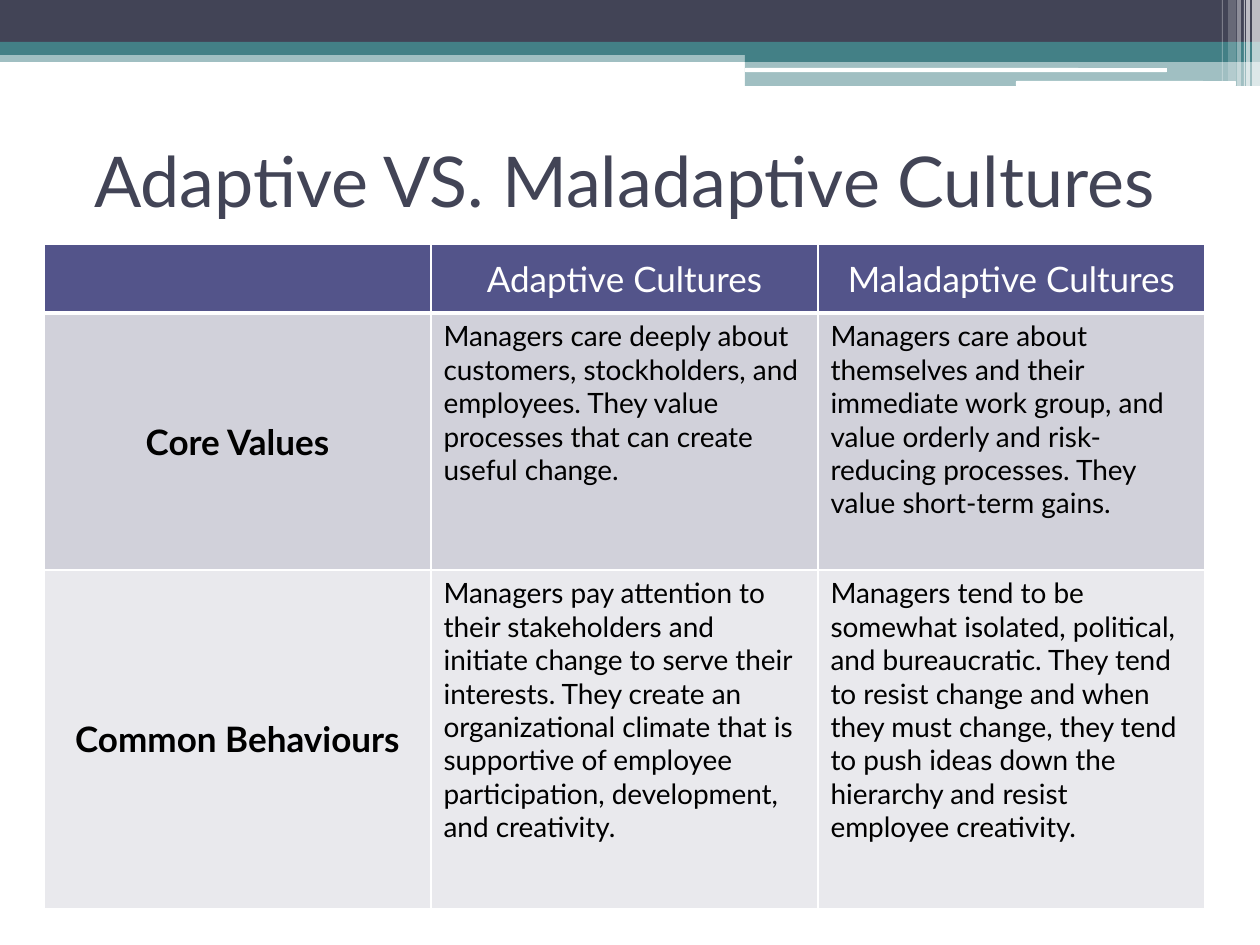
import lxml.etree
import pptx
import pptx.dml.color
import pptx.enum.shapes
import pptx.enum.text
import pptx.oxml.ns
import pptx.util

EMU_PER_PX = 914400 / 126
SHAPE = pptx.enum.shapes.MSO_SHAPE
ALIGN = pptx.enum.text.PP_ALIGN
ANCHOR = pptx.enum.text.MSO_ANCHOR
WHITE, BLACK, NAVY, TEAL = "FFFFFF", "000000", "424456", "438086"
HEADER, DARK_ROW, LIGHT_ROW = "53548A", "D1D1DA", "E9E9ED"


def px(n):
    return pptx.util.Emu(round(n * EMU_PER_PX))


def color(hex_code):
    return pptx.dml.color.RGBColor.from_string(hex_code)


def child(parent, tag, **attrs):
    return lxml.etree.SubElement(parent, pptx.oxml.ns.qn(tag), **attrs)


class Deck:
    """Holds the font and the slide being drawn."""
    font = "Lato"

    def __init__(self, width, height):
        self.prs = pptx.Presentation()
        self.prs.slide_width, self.prs.slide_height = px(width), px(height)
        self.s = self.prs.slides.add_slide(self.prs.slide_layouts[6])

    def bar(self, x, y, w, h, fill, opacity=100, rounded=False):
        kind = SHAPE.ROUNDED_RECTANGLE if rounded else SHAPE.RECTANGLE
        sp = self.s.shapes.add_shape(kind, px(x), px(y), px(w), px(h))
        sp.shadow.inherit = False
        sp.line.fill.background()
        sp.fill.solid()
        sp.fill.fore_color.rgb = color(fill)
        if opacity < 100:
            clr = sp.element.spPr.find(".//" + pptx.oxml.ns.qn("a:srgbClr"))
            child(clr, "a:alpha", val=str(opacity * 1000))

    def add_text(self, tf, text, size, fill, bold=False, align=ALIGN.LEFT):
        p = tf.paragraphs[0]
        p.alignment = align
        r = p.add_run()
        r.text = text
        r.font.name, r.font.size, r.font.bold = self.font, pptx.util.Pt(size), bold
        r.font.color.rgb = color(fill)

    def title(self, x, y, w, h, text):
        tf = self.s.shapes.add_textbox(px(x), px(y), px(w), px(h)).text_frame
        tf.word_wrap = True
        tf.vertical_anchor = ANCHOR.MIDDLE
        self.add_text(tf, text, 40, NAVY, align=ALIGN.CENTER)

    def borders(self, cell, bottom):
        """Draw white cell borders, with the bottom one in its own width."""
        tc_pr = cell._tc.get_or_add_tcPr()
        for side, width in (("L", 1), ("R", 1), ("T", 1), ("B", bottom)):
            ln = child(tc_pr, "a:ln" + side, w=str(int(pptx.util.Pt(width))))
            child(child(ln, "a:solidFill"), "a:srgbClr", val=WHITE)

    def table(self, x, y, col_width, row_heights, rows, fills):
        n = len(rows[0])
        frame = self.s.shapes.add_table(len(rows), n, px(x), px(y),
                                        px(col_width * n), px(sum(row_heights)))
        table = frame.table
        for col in table.columns:
            col.width = px(col_width)
        for i, (texts, height, fill) in enumerate(zip(rows, row_heights, fills)):
            table.rows[i].height = px(height)
            for j, text in enumerate(texts):
                cell = table.cell(i, j)
                self.borders(cell, bottom=3 if i == 0 else 1)
                cell.fill.solid()
                cell.fill.fore_color.rgb = color(fill)
                if not text:
                    continue
                if i == 0 or j == 0:
                    cell.vertical_anchor = ANCHOR.MIDDLE
                    self.add_text(cell.text_frame, text, 20, BLACK if i else WHITE,
                                  bold=i > 0, align=ALIGN.CENTER)
                else:
                    self.add_text(cell.text_frame, text, 16, BLACK)


def main():
    deck = Deck(1260, 945)

    deck.bar(0, 50, 1260, 12, TEAL, opacity=50)
    deck.bar(0, 0, 1260, 43, NAVY)
    deck.bar(0, 42, 1260, 13, TEAL)
    deck.bar(745, 49, 515, 13, TEAL)
    deck.bar(745, 61, 515, 25, TEAL, opacity=50)
    deck.bar(745, 68, 422, 4, WHITE, rounded=True)
    deck.bar(1016, 81, 220, 5, WHITE, rounded=True)
    stripes = [(1252, 8, 86, 65), (1246, 4, 86, 65), (1244, 1, 86, 60),
               (1237, 4, 86, 40), (1228, 8, 81, 20), (1222, 1, 81, 30)]
    for x, width, height, opacity in stripes:
        deck.bar(x, 0, width, height, WHITE, opacity)

    deck.title(44, 106, 1161, 147, "Adaptive VS. Maladaptive Cultures")
    rows = [
        ("", "Adaptive Cultures", "Maladaptive Cultures"),
        ("Core Values",
         "Managers care deeply about customers, stockholders, and employees. "
         "They value processes that can create useful change.",
         "Managers care about themselves and their immediate work group, and "
         "value orderly and risk-reducing processes. They value short-term gains."),
        ("Common Behaviours",
         "Managers pay attention to their stakeholders and initiate change to "
         "serve their interests. They create an organizational climate that is "
         "supportive of employee participation, development, and creativity.",
         "Managers tend to be somewhat isolated, political, and bureaucratic. "
         "They tend to resist change and when they must change, they tend to "
         "push ideas down the hierarchy and resist employee creativity."),
    ]
    deck.table(44, 244, 387, (69, 257, 339), rows, (HEADER, DARK_ROW, LIGHT_ROW))
    deck.prs.save("out.pptx")


if __name__ == "__main__":
    main()
